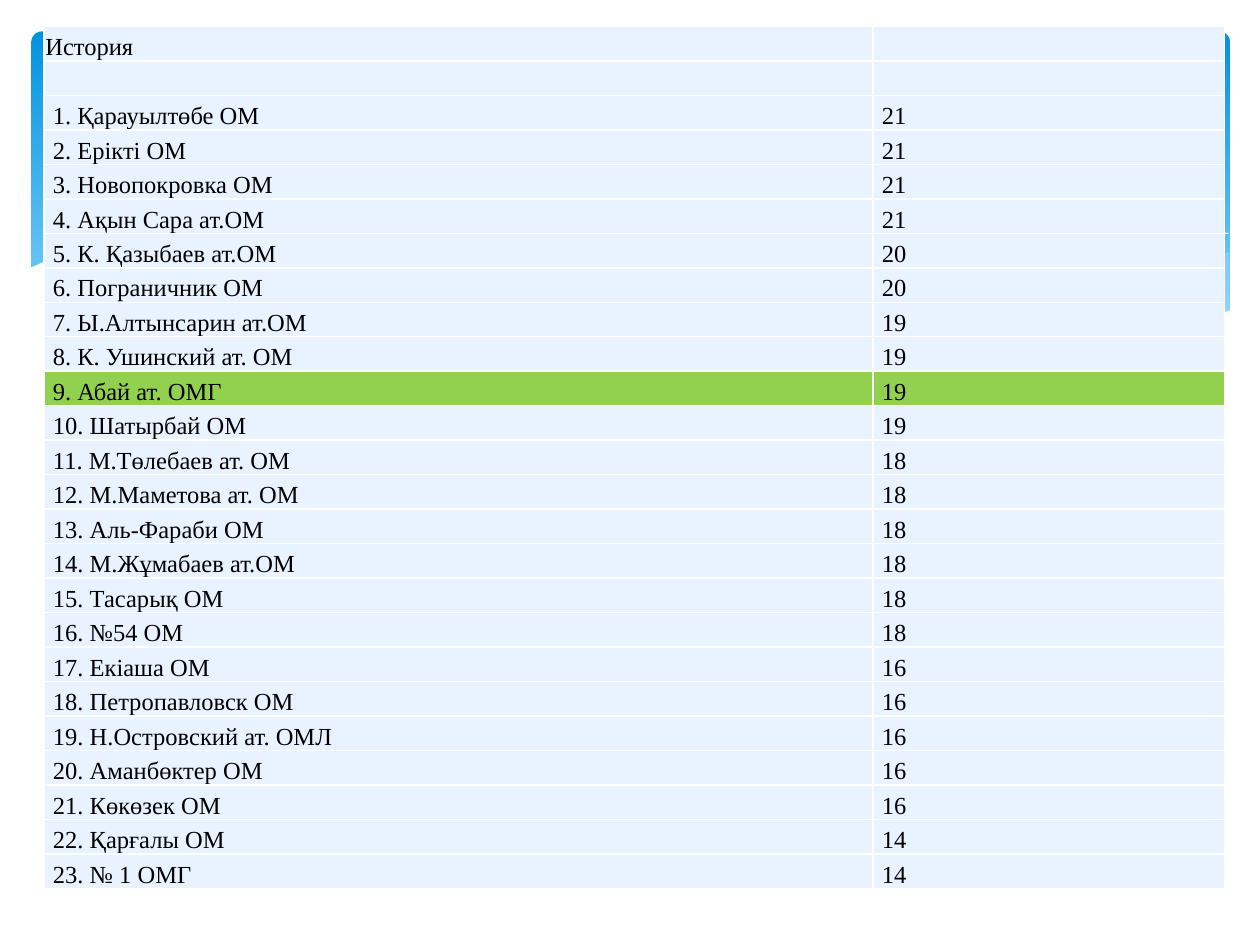
from dataclasses import dataclass
from typing import NamedTuple, Optional

from lxml.etree import SubElement
from pptx import Presentation
from pptx.dml.color import RGBColor
from pptx.enum.shapes import MSO_SHAPE
from pptx.enum.text import MSO_ANCHOR
from pptx.oxml.ns import qn
from pptx.util import Inches, Pt


@dataclass(frozen=True)
class Theme:
    font: str = "Times New Roman"
    text_size: int = 14
    text: str = "000000"
    white: str = "FFFFFF"
    row: str = "E8F3FF"
    highlight: str = "92D050"
    sky_top: str = "0293E0"
    sky_bottom: str = "83D3FE"
    wave: str = "C6E7FC"
    border: int = 1


class Point(NamedTuple):
    x: float
    y: float


class Bend(NamedTuple):
    start: Point
    leave: Point
    arrive: Point
    end: Point

    def at(self, t: float) -> Point:
        weights = ((1 - t) ** 3, 3 * t * (1 - t) ** 2, 3 * t ** 2 * (1 - t), t ** 3)
        return Point(sum(w * p.x for w, p in zip(weights, self)),
                     sum(w * p.y for w, p in zip(weights, self)))


@dataclass(frozen=True)
class Wave:
    bends: tuple[Bend, ...]
    corners: tuple[Point, ...] = ()
    fill: Optional[str] = None
    opacity: int = 100


@dataclass(frozen=True)
class School:
    name: str
    score: int


THEME = Theme()
BEND_STEPS = 16
SUBJECT = "История"
HIGHLIGHTED = "Абай ат. ОМГ"
COLUMN_WIDTHS = (6.58, 2.79)
TABLE_LEFT, TABLE_TOP, TABLE_HEIGHT = 0.35, 0.21, 6.85
HEADER_INDENT, SCHOOL_INDENT = 0.01, 0.07

RIGHT_WAVE = Wave(
    (Bend(Point(9.76, 2), Point(8.7, 2.2), Point(7.9, 2.45), Point(6.61, 2.65)),
     Bend(Point(6.61, 2.65), Point(7.7, 2.81), Point(8.9, 2.84), Point(9.76, 2.47))),
    fill=THEME.wave, opacity=29)
MIDDLE_WAVE = Wave(
    (Bend(Point(2.86, 1.91), Point(4.6, 1.62), Point(6.4, 2.35), Point(8.93, 2.73)),
     Bend(Point(8.93, 2.73), Point(7, 3), Point(4.9, 2.2), Point(2.86, 1.91))),
    fill=THEME.wave, opacity=40)
FALLING_LINE = Wave(
    (Bend(Point(3.09, 1.95), Point(4.9, 1.7), Point(6.8, 2.1), Point(9.07, 2.72)),))
RISING_LINE = Wave(
    (Bend(Point(6.13, 2.57), Point(7.3, 2.28), Point(8.6, 1.95), Point(9.75, 1.85)),))
FRONT_WAVE = Wave(
    (Bend(Point(9.77, 2.46), Point(8.5, 2.97), Point(6.7, 2.75), Point(4.47, 2.2)),
     Bend(Point(4.47, 2.2), Point(2.9, 1.8), Point(1.2, 1.65), Point(0.23, 2.13))),
    corners=(Point(0.23, 3.29), Point(9.77, 3.29)), fill=THEME.white)
WAVES = (RIGHT_WAVE, MIDDLE_WAVE, FALLING_LINE, RISING_LINE, FRONT_WAVE)

SCHOOLS = (
    School("Қарауылтөбе ОМ", 21),
    School("Ерікті ОМ", 21),
    School("Новопокровка ОМ", 21),
    School("Ақын Сара ат.ОМ", 21),
    School("К. Қазыбаев ат.ОМ", 20),
    School("Пограничник ОМ", 20),
    School("Ы.Алтынсарин ат.ОМ", 19),
    School("К. Ушинский ат. ОМ", 19),
    School(HIGHLIGHTED, 19),
    School("Шатырбай ОМ", 19),
    School("М.Төлебаев ат. ОМ", 18),
    School("М.Маметова ат. ОМ", 18),
    School("Аль-Фараби ОМ", 18),
    School("М.Жұмабаев ат.ОМ", 18),
    School("Тасарық ОМ", 18),
    School("№54 ОМ", 18),
    School("Екіаша ОМ", 16),
    School("Петропавловск ОМ", 16),
    School("Н.Островский ат. ОМЛ", 16),
    School("Аманбөктер ОМ", 16),
    School("Көкөзек ОМ", 16),
    School("Қарғалы ОМ", 14),
    School("№ 1 ОМГ", 14),
)


def rgb(value: str) -> RGBColor:
    return RGBColor.from_string(value)


def draw_sky(slide) -> None:
    sky = slide.shapes.add_shape(MSO_SHAPE.ROUNDED_RECTANGLE, Inches(0.25),
                                 Inches(0.25), Inches(9.51), Inches(2.7))
    sky.adjustments[0] = 0.03
    sky.shadow.inherit = False
    sky.line.fill.background()
    sky.fill.gradient()
    sky.fill.gradient_angle = 270
    stops = ((0, THEME.sky_top), (0.9, THEME.sky_bottom))
    for stop, (position, color) in zip(sky.fill.gradient_stops, stops):
        stop.position = position
        stop.color.rgb = rgb(color)


def draw_wave(slide, wave: Wave) -> None:
    outline = [bend.at(step / BEND_STEPS)
               for bend in wave.bends for step in range(BEND_STEPS + 1)]
    outline.extend(wave.corners)
    start, *rest = [(Inches(point.x), Inches(point.y)) for point in outline]
    builder = slide.shapes.build_freeform(*start)
    builder.add_line_segments(rest, close=wave.fill is not None)
    curve = builder.convert_to_shape()
    curve.shadow.inherit = False
    if wave.fill is None:
        curve.fill.background()
        curve.line.color.rgb = rgb(THEME.white)
        curve.line.width = Pt(0)
        return
    curve.line.fill.background()
    curve.fill.solid()
    curve.fill.fore_color.rgb = rgb(wave.fill)
    if wave.opacity < 100:
        color = curve.fill._xPr.find(qn("a:solidFill"))[0]
        SubElement(color, qn("a:alpha"), val=str(wave.opacity * 1000))


def add_borders(cell) -> None:
    properties = cell._tc.get_or_add_tcPr()
    for side in ("a:lnL", "a:lnR", "a:lnT", "a:lnB"):
        border = SubElement(properties, qn(side), w=str(Pt(THEME.border)))
        fill = SubElement(border, qn("a:solidFill"))
        SubElement(fill, qn("a:srgbClr"), val=THEME.white)


def fill_cell(cell, text: str, color: str, indent: float) -> None:
    add_borders(cell)
    cell.fill.solid()
    cell.fill.fore_color.rgb = rgb(color)
    cell.margin_left = Inches(indent)
    cell.margin_right = cell.margin_top = Inches(0.01)
    cell.margin_bottom = 0
    cell.vertical_anchor = MSO_ANCHOR.BOTTOM
    paragraph = cell.text_frame.paragraphs[0]
    if text:
        paragraph.text = text
    else:
        SubElement(paragraph._p, qn("a:endParaRPr"), sz=str(THEME.text_size * 100))
    paragraph.font.name = THEME.font
    paragraph.font.size = Pt(THEME.text_size)
    paragraph.font.color.rgb = rgb(THEME.text)


def draw_scores(slide) -> None:
    rows = [((heading, ""), THEME.row, HEADER_INDENT) for heading in (SUBJECT, "")]
    for number, school in enumerate(SCHOOLS, 1):
        color = THEME.highlight if school.name == HIGHLIGHTED else THEME.row
        rows.append(((f"{number}. {school.name}", str(school.score)),
                     color, SCHOOL_INDENT))
    scores = slide.shapes.add_table(
        len(rows), len(COLUMN_WIDTHS), Inches(TABLE_LEFT), Inches(TABLE_TOP),
        Inches(sum(COLUMN_WIDTHS)), Inches(TABLE_HEIGHT)).table
    scores.first_row = scores.horz_banding = False
    for column, width in zip(scores.columns, COLUMN_WIDTHS):
        column.width = Inches(width)
    for row, (texts, color, indent) in zip(scores.rows, rows):
        for cell, text in zip(row.cells, texts):
            fill_cell(cell, text, color, indent)


def main() -> None:
    deck = Presentation()
    deck.slide_width, deck.slide_height = Inches(10), Inches(7.5)
    slide = deck.slides.add_slide(deck.slide_layouts[6])
    draw_sky(slide)
    for wave in WAVES:
        draw_wave(slide, wave)
    draw_scores(slide)
    deck.save("out.pptx")


if __name__ == "__main__":
    main()
